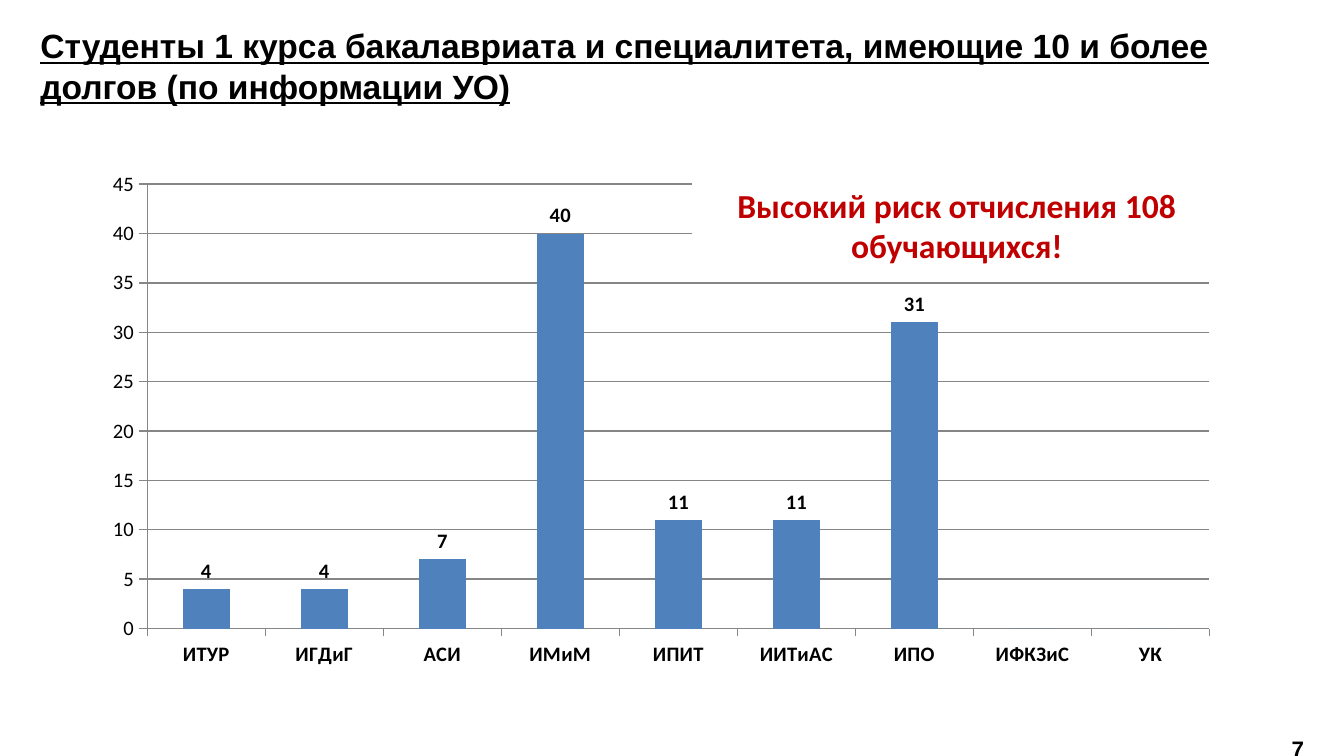
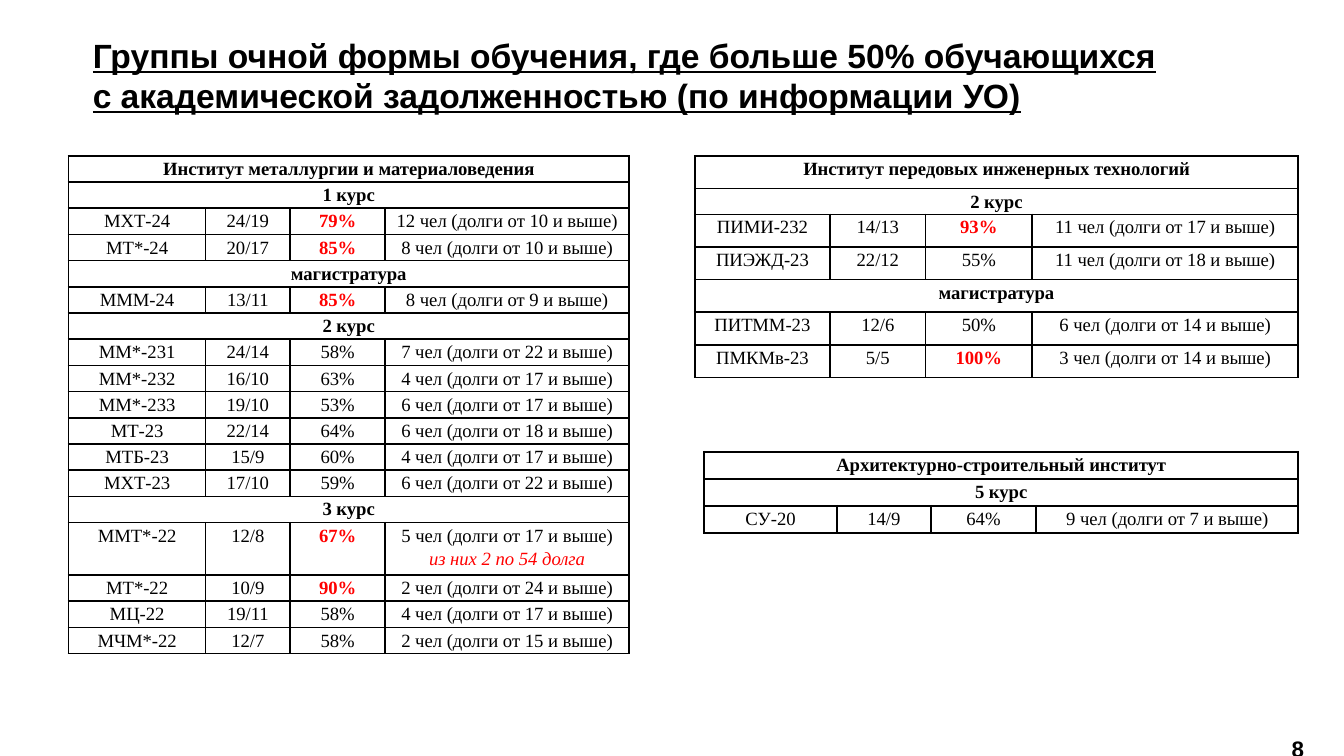
from dataclasses import dataclass
from typing import NamedTuple

from lxml.etree import SubElement
from pptx import Presentation
from pptx.chart.data import CategoryChartData
from pptx.dml.color import RGBColor
from pptx.enum.chart import XL_CHART_TYPE, XL_LABEL_POSITION, XL_TICK_MARK
from pptx.enum.shapes import MSO_SHAPE
from pptx.enum.text import MSO_ANCHOR, MSO_AUTO_SIZE, PP_ALIGN
from pptx.oxml.ns import qn
from pptx.util import Pt


# Theme: colours, fonts and type sizes
@dataclass(frozen=True)
class Theme:
    black: str = "000000"
    white: str = "FFFFFF"
    red: str = "FF0000"
    alert: str = "C00000"
    bar: str = "4F81BD"
    grid: str = "868686"
    head: str = "Arial"
    body: str = "Calibri"
    grade: str = "Times New Roman"
    big: float = 18
    page: float = 12
    chart: float = 11
    cell: float = 10


THEME = Theme()
LIMIT = 65  # a group share above this is marked red


class Box(NamedTuple):
    left: float
    top: float
    width: float
    height: float

    def place(self) -> list:
        return [Pt(side) for side in self]


class Group(NamedTuple):
    name: str
    ratio: str
    share: int
    people: int
    debts: int
    note: str = ""


class Grid(NamedTuple):
    left: float
    top: float
    cols: tuple
    row: float
    inset: float
    rows: list  # a str is a merged heading, a Group is a row of four cells
    sizes: dict = {}  # heights of rows that differ from the rest


# Slide content
BARS = {"ИТУР": 4, "ИГДиГ": 4, "АСИ": 7, "ИМиМ": 40, "ИПИТ": 11,
        "ИИТиАС": 11, "ИПО": 31, "ИФКЗиС": 0, "УК": 0}

METAL = Grid(36.7, 83.5, (73.5, 45.2, 51, 130.5), 14.05, 3.6, [
    "Институт металлургии и материаловедения",
    "1 курс",
    Group("МХТ-24", "24/19", 79, 12, 10),
    Group("МТ*-24", "20/17", 85, 8, 10),
    "магистратура",
    Group("МММ-24", "13/11", 85, 8, 9),
    "2 курс",
    Group("ММ*-231", "24/14", 58, 7, 22),
    Group("ММ*-232", "16/10", 63, 4, 17),
    Group("ММ*-233", "19/10", 53, 6, 17),
    Group("МТ-23", "22/14", 64, 6, 18),
    Group("МТБ-23", "15/9", 60, 4, 17),
    Group("МХТ-23", "17/10", 59, 6, 22),
    "3 курс",
    Group("ММТ*-22", "12/8", 67, 5, 17, "из них 2 по 54 долга"),
    Group("МТ*-22", "10/9", 90, 2, 24),
    Group("МЦ-22", "19/11", 58, 4, 17),
    Group("МЧМ*-22", "12/7", 58, 2, 15),
], {14: 28.1})

TECH = Grid(372.2, 83.5, (72.5, 51.2, 57, 142.6), 17.5, 4.9, [
    "Институт передовых инженерных технологий",
    "2 курс",
    Group("ПИМИ-232", "14/13", 93, 11, 17),
    Group("ПИЭЖД-23", "22/12", 55, 11, 18),
    "магистратура",
    Group("ПИТММ-23", "12/6", 50, 6, 14),
    Group("ПМКМв-23", "5/5", 100, 3, 14),
], {1: 11.8})

BUILD = Grid(377.2, 242, (71.2, 50.3, 56.4, 140.4), 14.5, 4.9, [
    "Архитектурно-строительный институт",
    "5 курс",
    Group("СУ-20", "14/9", 64, 9, 7),
])


# Text helpers
def style(font, *, name: str, size: float, color: str = THEME.black,
          bold: bool = False, italic: bool = False, under: bool = False) -> None:
    font.name, font.size = name, Pt(size)
    font.bold, font.italic, font.underline = bold, italic, under
    font.color.rgb = RGBColor.from_string(color)


def write(para, text: str, *, align=PP_ALIGN.CENTER, space: float = 1, **look) -> None:
    """Add one formatted run to a paragraph."""
    para.alignment, para.line_spacing = align, space
    run = para.add_run()
    run.text = text
    style(run.font, **look)


# Parts shared by the slides
def start(deck, box: Box, lines: list, page: int):
    slide = deck.slides.add_slide(deck.slide_layouts.get_by_name("Title Only"))
    title = slide.shapes.title
    title.left, title.top, title.width, title.height = box.place()
    frame = title.text_frame
    frame.vertical_anchor = MSO_ANCHOR.TOP
    frame.auto_size = MSO_AUTO_SIZE.NONE
    for i, line in enumerate(lines):
        para = frame.add_paragraph() if i else frame.paragraphs[0]
        para.space_before = Pt(0)
        write(para, line, align=PP_ALIGN.LEFT, name=THEME.head,
              size=THEME.big, bold=True, under=True)

    mark = slide.shapes.add_textbox(*Box(671.8, 383, 46.8, 26.6).place())
    mark.text_frame.word_wrap = True
    write(mark.text_frame.paragraphs[0], str(page), space=1.5,
          name=THEME.head, size=THEME.page, bold=True)
    return slide


# Chart slide
def rule(line) -> None:
    line.color.rgb = RGBColor.from_string(THEME.grid)
    line.width = Pt(0.75)


def plot(slide, box: Box) -> None:
    data = CategoryChartData()
    data.categories = list(BARS)
    data.add_series("Series 1", list(BARS.values()))
    chart = slide.shapes.add_chart(
        XL_CHART_TYPE.COLUMN_CLUSTERED, *box.place(), data).chart
    chart.has_legend = chart.has_title = False
    look = {"name": THEME.body, "size": THEME.chart}
    style(chart.font, **look)

    bars = chart.plots[0]
    bars.gap_width, bars.vary_by_categories = 150, False
    fill = bars.series[0].format.fill
    fill.solid()
    fill.fore_color.rgb = RGBColor.from_string(THEME.bar)

    bars.has_data_labels = True
    tags = bars.data_labels
    tags.show_value = True
    tags.position = XL_LABEL_POSITION.OUTSIDE_END
    tags.number_format, tags.number_format_is_linked = "0;;;", False
    style(tags.font, bold=True, **look)

    for axis, bold in ((chart.category_axis, True), (chart.value_axis, False)):
        axis.major_tick_mark = XL_TICK_MARK.OUTSIDE
        style(axis.tick_labels.font, bold=bold, **look)
        rule(axis.format.line)
    scale = chart.value_axis
    scale.minimum_scale, scale.maximum_scale, scale.major_unit = 0, 45, 5
    scale.has_major_gridlines = True
    rule(scale.major_gridlines.format.line)


def warn(slide, box: Box, text: str) -> None:
    shape = slide.shapes.add_shape(MSO_SHAPE.RECTANGLE, *box.place())
    shape.shadow.inherit = False
    shape.fill.solid()
    shape.fill.fore_color.rgb = RGBColor.from_string(THEME.white)
    shape.line.fill.background()
    shape.text_frame.word_wrap = True
    write(shape.text_frame.paragraphs[0], text, name=THEME.body,
          size=THEME.big, color=THEME.alert, bold=True)


# Table slide
def frame(cell, inset: float) -> None:
    """Set the margins, border and empty fill of a cell."""
    cell.margin_left = cell.margin_right = Pt(inset)
    cell.margin_top = cell.margin_bottom = 0
    props = cell._tc.get_or_add_tcPr()
    for side in ("a:lnL", "a:lnR", "a:lnT", "a:lnB"):
        line = SubElement(props, qn(side), w=str(Pt(1)))
        fill = SubElement(line, qn("a:solidFill"))
        SubElement(fill, qn("a:srgbClr"), val=THEME.black)
    cell.fill.background()


def table(slide, grid: Grid) -> None:
    sizes = [grid.sizes.get(i, grid.row) for i in range(len(grid.rows))]
    box = Box(grid.left, grid.top, sum(grid.cols), sum(sizes))
    tab = slide.shapes.add_table(
        len(sizes), len(grid.cols), *box.place()).table
    tab.first_row = tab.horz_banding = False
    for col, width in zip(tab.columns, grid.cols):
        col.width = Pt(width)

    look = {"name": THEME.grade, "size": THEME.cell, "space": 1.15}
    for row, size, item in zip(tab.rows, sizes, grid.rows):
        row.height = Pt(size)
        cells = list(row.cells)
        for cell in cells:
            frame(cell, grid.inset)
        paras = [cell.text_frame.paragraphs[0] for cell in cells]
        if isinstance(item, str):
            cells[0].merge(cells[-1])
            write(paras[0], item, bold=True, **look)
            continue
        high = item.share > LIMIT
        debt = f"{item.people} чел (долги от {item.debts} и выше)"
        if item.note:
            debt += " "
        write(paras[0], item.name, **look)
        write(paras[1], item.ratio, **look)
        write(paras[2], f"{item.share}%", bold=high,
              color=THEME.red if high else THEME.black, **look)
        write(paras[3], debt, **look)
        if item.note:
            write(paras[3], item.note, italic=True, color=THEME.red, **look)


def main() -> None:
    deck = Presentation()
    deck.slide_width, deck.slide_height = Pt(720), Pt(405)

    slide = start(deck, Box(14.4, 10, 640.8, 51), [
        "Студенты 1 курса бакалавриата и специалитета, имеющие 10 и более "
        "долгов (по информации УО)"], 7)
    plot(slide, Box(48.2, 86.4, 612, 276.5))
    warn(slide, Box(370.8, 95, 283.7, 51), "Высокий риск отчисления 108 обучающихся!")

    slide = start(deck, Box(42.5, 15, 607, 51), [
        "Группы очной формы обучения, где больше 50% обучающихся",
        "с академической задолженностью (по информации УО)"], 8)
    for grid in (METAL, TECH, BUILD):
        table(slide, grid)

    deck.save("out.pptx")


if __name__ == "__main__":
    main()
